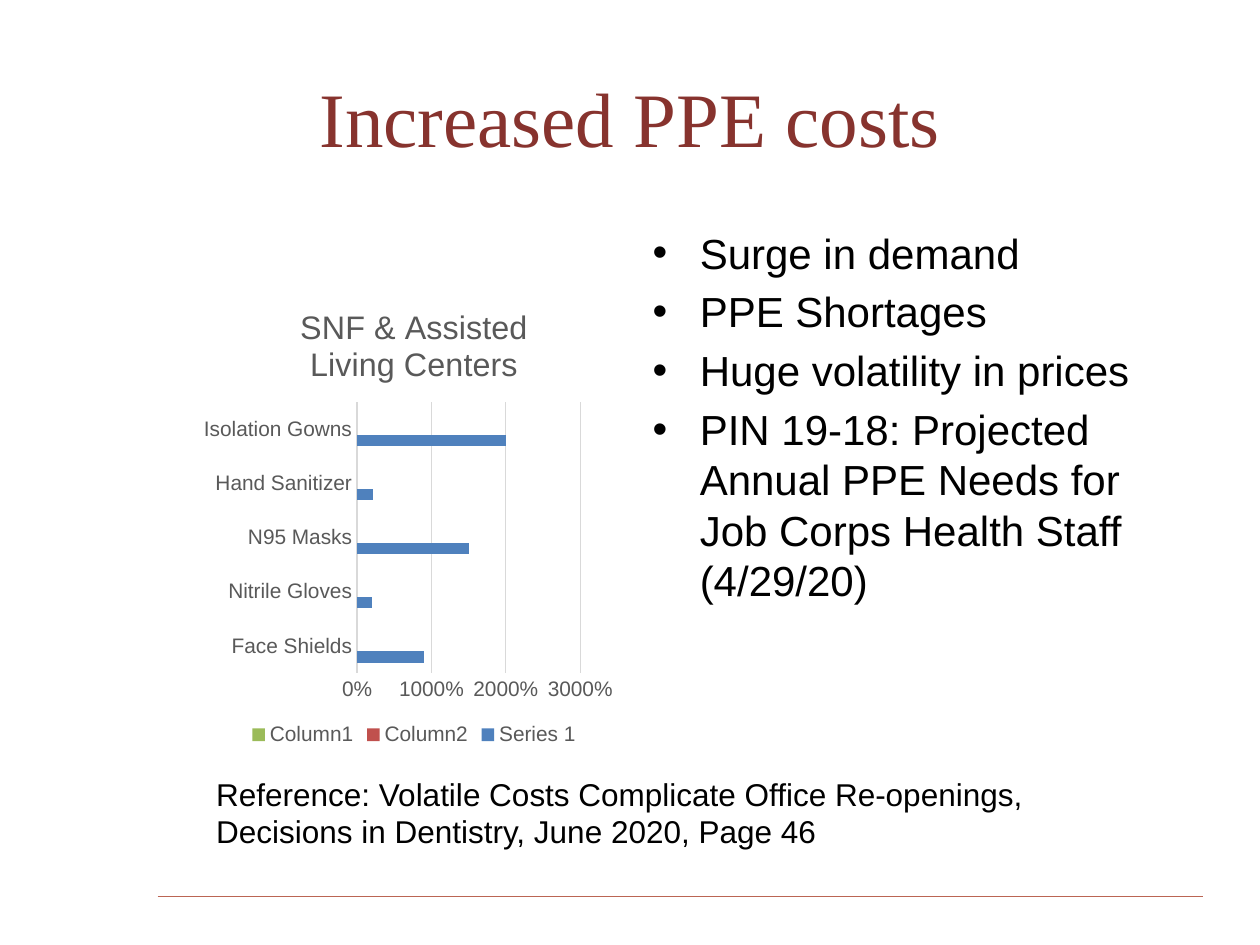
from dataclasses import dataclass

from lxml import etree
from pptx import Presentation
from pptx import util as u
from pptx.chart.data import CategoryChartData
from pptx.dml.color import RGBColor
from pptx.enum import chart as ch
from pptx.enum import shapes, text
from pptx.oxml.ns import qn

COLORS = {"title": "87332E", "text": "000000", "rule": "BB6554",
          "label": "595959", "grid": "D9D9D9",
          "blue": "4F81BD", "red": "C0504D", "green": "9BBB59"}


@dataclass
class Box:
    """Position and size in centimetres."""
    left: float
    top: float
    width: float
    height: float

    def lengths(self) -> list:
        return [u.Cm(v) for v in (self.left, self.top, self.width, self.height)]


@dataclass
class Series:
    name: str
    values: list
    color: str


CATEGORIES = ["Face Shields", "Nitrile Gloves", "N95 Masks",
              "Hand Sanitizer", "Isolation Gowns"]
SERIES = [Series("Series 1", [9, 2, 15.1, 2.1, 20], "blue"),
          Series("Column2", [None] * 5, "red"),
          Series("Column1", [None] * 5, "green")]
BULLETS = ["Surge in demand", "PPE Shortages", "Huge volatility in prices",
           "PIN 19-18: Projected Annual PPE Needs for Job Corps Health Staff (4/29/20)"]


def rgb(name: str) -> RGBColor:
    return RGBColor.from_string(COLORS[name])


def style_font(font, size: float, color: str, name: str = "Arial") -> None:
    font.size, font.name = u.Pt(size), name
    font.color.rgb = rgb(color)


def style_line(line, color: str) -> None:
    line.color.rgb = rgb(color)
    line.width = u.Pt(0.75)


def place(sp, box: Box) -> None:
    sp.left, sp.top, sp.width, sp.height = box.lengths()


def fill_text(tf, lines: list, size: float, color: str, name: str = "Arial") -> None:
    tf.text = "\n".join(lines)
    tf.word_wrap = True
    tf.auto_size = text.MSO_AUTO_SIZE.NONE
    for p in tf.paragraphs:
        for r in p.runs:
            style_font(r.font, size, color, name)


def add_cost_chart(s, box: Box) -> None:
    data = CategoryChartData(number_format="0%")
    data.categories = CATEGORIES
    for item in SERIES:
        data.add_series(item.name, item.values)
    chart = s.shapes.add_chart(ch.XL_CHART_TYPE.BAR_CLUSTERED,
                               *box.lengths(), data).chart
    style_font(chart.font, 10, "text")

    # Title and legend
    chart.has_title = True
    tf = chart.chart_title.text_frame
    tf.text = "SNF & Assisted Living Centers"
    style_font(tf.paragraphs[0].runs[0].font, 18.6, "label")
    tf.paragraphs[0].runs[0].font.bold = False
    chart.has_legend = True
    chart.legend.position = ch.XL_LEGEND_POSITION.BOTTOM
    chart.legend.include_in_layout = False
    style_font(chart.legend.font, 12, "label")

    # Axes
    for axis in (chart.category_axis, chart.value_axis):
        axis.major_tick_mark = axis.minor_tick_mark = ch.XL_TICK_MARK.NONE
        style_font(axis.tick_labels.font, 12, "label")
    style_line(chart.category_axis.format.line, "grid")
    values = chart.value_axis
    values.format.line.fill.background()
    values.has_major_gridlines = True
    style_line(values.major_gridlines.format.line, "grid")
    values.tick_labels.number_format = "0%"
    values.tick_labels.number_format_is_linked = False

    # Bars
    plot = chart.plots[0]
    plot.gap_width = 182
    plot.vary_by_categories = False
    for series, item in zip(plot.series, SERIES):
        series.format.fill.solid()
        series.format.fill.fore_color.rgb = rgb(item.color)


def add_rule(s, left: float, right: float, y: float) -> None:
    line = s.shapes.add_connector(shapes.MSO_CONNECTOR.STRAIGHT, u.Cm(left),
                                  u.Cm(y), u.Cm(right), u.Cm(y))
    style_line(line.line, "rule")
    etree.SubElement(line._element.spPr, qn("a:effectLst"))


def main() -> None:
    prs = Presentation()
    prs.slide_width, prs.slide_height = u.Cm(25.4), u.Cm(19.05)
    s = prs.slides.add_slide(prs.slide_layouts[1])

    # Footer rule
    add_rule(s, 3.18, 24.26, 18.08)

    # Title
    title = s.shapes.title
    place(title, Box(1.27, 0.76, 22.86, 3.18))
    fill_text(title.text_frame, ["Increased PPE costs"], 44, "title", "Times New Roman")

    # Chart
    add_cost_chart(s, Box(4.11, 5.72, 8.41, 9.42))

    # Bullet list
    body = s.placeholders[1]
    place(body, Box(12.9, 4.45, 11.23, 8.69))
    fill_text(body.text_frame, BULLETS, 24, "text")
    body.text_frame.paragraphs[0].space_before = u.Pt(0)

    # Reference
    ref = s.shapes.add_textbox(*Box(4.11, 15.49, 17.78, 2.57).lengths())
    fill_text(ref.text_frame,
              ["Reference: Volatile Costs Complicate Office Re-openings, "
               "Decisions in Dentistry, June 2020, Page 46"], 18, "text")

    prs.save("out.pptx")


if __name__ == "__main__":
    main()
